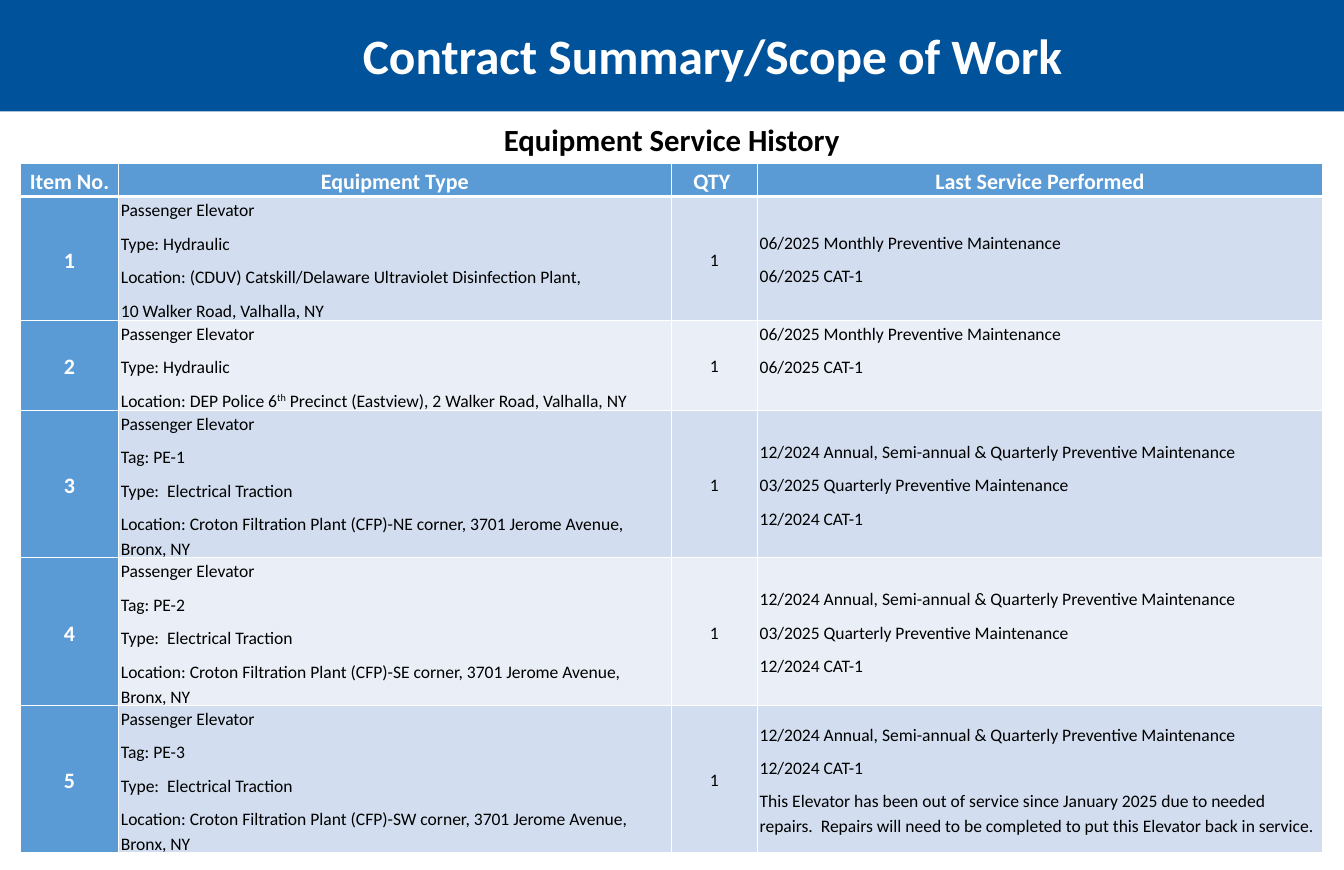
from lxml.etree import SubElement
from pptx import Presentation
from pptx.dml.color import RGBColor
from pptx.enum.shapes import MSO_SHAPE as Preset
from pptx.enum.text import MSO_ANCHOR as Anchor, MSO_AUTO_SIZE as AutoSize, PP_ALIGN as Align
from pptx.oxml.ns import qn
from pptx.util import Inches, Pt

COLUMNS, ROWS = 17, 11
WIDTH, HEIGHT = Inches(17), Inches(11)
FONT = "Calibri"
BANNER_BLUE = RGBColor(0x00, 0x52, 0x9B)
HEADER_BLUE = RGBColor(0x5B, 0x9B, 0xD5)
BAND_DARK = RGBColor(0xD2, 0xDE, 0xEF)
BAND_LIGHT = RGBColor(0xEA, 0xEF, 0xF7)
WHITE = RGBColor(0xFF, 0xFF, 0xFF)
BLACK = RGBColor(0x00, 0x00, 0x00)

TABLE_COLUMNS = (1.24, 6.99, 1.09, 7.15)
TABLE_ROWS = (0.42, 1.55, 1.05, 1.51, 1.56, 1.74)
HEADINGS = ("Item No.", "Equipment Type", "QTY ", "Last Service Performed")
MONTHLY = "06/2025 Monthly Preventive Maintenance"
ANNUAL = "12/2024 Annual, Semi-annual & Quarterly Preventive Maintenance"
QUARTERLY = "03/2025 Quarterly Preventive Maintenance"
JUNE_TEST, DECEMBER_TEST = "06/2025 CAT-1", "12/2024 CAT-1"
OUT_OF_SERVICE = ("This Elevator has been out of service since January 2025 due to needed repairs.  "
                  "Repairs will need to be completed to put this Elevator back in service.")


def hydraulic(*location):
    """Describe a hydraulic elevator."""
    return ("Passenger Elevator", "Type: Hydraulic", *location)


def traction(tag, corner):
    """Describe an electrical traction elevator at the filtration plant."""
    return ("Passenger Elevator", f"Tag: {tag}", "Type:  Electrical Traction",
            f"Location: Croton Filtration Plant (CFP)-{corner} corner, 3701 Jerome Avenue, Bronx, NY")


ELEVATORS = (
    (hydraulic("Location: (CDUV) Catskill/Delaware Ultraviolet Disinfection Plant,",
               "10 Walker Road, Valhalla, NY"), (MONTHLY, JUNE_TEST), Anchor.MIDDLE),
    (hydraulic("Location: DEP Police 6^th^ Precinct (Eastview), 2 Walker Road, Valhalla, NY"),
     (MONTHLY, JUNE_TEST), Anchor.TOP),
    (traction("PE-1", "NE"), (ANNUAL, QUARTERLY, DECEMBER_TEST), Anchor.MIDDLE),
    (traction("PE-2", "SE"), (ANNUAL, QUARTERLY, DECEMBER_TEST), Anchor.MIDDLE),
    (traction("PE-3", "SW"), (ANNUAL, DECEMBER_TEST, OUT_OF_SERVICE), Anchor.MIDDLE),
)


def across(columns):
    """Turn grid columns into a length."""
    return round(WIDTH * columns / COLUMNS)


def down(rows):
    """Turn grid rows into a length."""
    return round(HEIGHT * rows / ROWS)


def area(left, top, width, height):
    """Turn a place on the grid into lengths."""
    return across(left), down(top), across(width), down(height)


def write_lines(frame, lines, size, color, bold, align, spacing, after):
    """Write one paragraph per line, raising the text between carets."""
    for index, line in enumerate(lines):
        para = frame.add_paragraph() if index else frame.paragraphs[0]
        para.alignment = align
        para.line_spacing = spacing
        para.space_after = Pt(after)
        for part, text in enumerate(line.split("^")):
            span = para.add_run()
            span.text = text
            span.font.name = FONT
            span.font.size = Pt(size)
            span.font.bold = bold
            span.font.color.rgb = color
            if part % 2:
                span._r.get_or_add_rPr().set("baseline", "30000")


def add_banner(page):
    """Add the blue band along the top."""
    banner = page.shapes.add_shape(Preset.RECTANGLE, *area(0, 0, COLUMNS, 1.41))
    banner.shadow.inherit = False
    banner.fill.solid()
    banner.fill.fore_color.rgb = BANNER_BLUE
    banner.line.fill.background()


def add_heading(page, place, text, size, color, spacing=1.0, after=0):
    """Add a bold centred heading."""
    box = page.shapes.add_textbox(*area(*place))
    box.text_frame.word_wrap = True
    box.text_frame.auto_size = AutoSize.SHAPE_TO_FIT_TEXT
    write_lines(box.text_frame, (text,), size, color, True, Align.CENTER, spacing, after)


def add_border(cell, side, points):
    """Draw one white edge of a cell."""
    edge = SubElement(cell._tc.get_or_add_tcPr(), qn(f"a:ln{side}"), w=str(Pt(points)))
    SubElement(SubElement(edge, qn("a:solidFill")), qn("a:srgbClr"), val=str(WHITE))


def fill_cell(cell, lines, fill, strong=False, align=Align.CENTER, anchor=Anchor.MIDDLE, top=1, bottom=1):
    """Style a table cell and write its lines."""
    cell.margin_left = cell.margin_right = across(0.03)
    cell.margin_top = cell.margin_bottom = 0
    cell.vertical_anchor = anchor
    for side, points in (("L", 1), ("R", 1), ("T", top), ("B", bottom)):
        add_border(cell, side, points)
    cell.fill.solid()
    cell.fill.fore_color.rgb = fill
    size, color = (20, WHITE) if strong else (16, BLACK)
    write_lines(cell.text_frame, lines, size, color, strong, align, 1.15, 8)


def add_history(page):
    """Add the table of elevators and their last service."""
    place = area(0.26, 2.07, 16.48, 8.66)
    holder = page.shapes.add_table(len(TABLE_ROWS), len(TABLE_COLUMNS), *place)
    table = holder.table
    table.horz_banding = False
    for column, share in zip(table.columns, TABLE_COLUMNS):
        column.width = across(share)
    for row, share in zip(table.rows, TABLE_ROWS):
        row.height = down(share)
    holder.height = place[3]
    for index, heading in enumerate(HEADINGS):
        fill_cell(table.cell(0, index), (heading,), HEADER_BLUE, strong=True, bottom=3)
    for number, (equipment, service, anchor) in enumerate(ELEVATORS, start=1):
        item, kind, quantity, last = table.rows[number].cells
        band = BAND_DARK if number % 2 else BAND_LIGHT
        top = 3 if number == 1 else 1
        fill_cell(item, (str(number),), HEADER_BLUE, strong=True, top=top)
        fill_cell(kind, equipment, band, align=Align.LEFT, top=top)
        fill_cell(quantity, ("1",), band, top=top)
        fill_cell(last, service, band, align=Align.LEFT, anchor=anchor, top=top)


def main():
    """Build the slide and save it."""
    deck = Presentation()
    deck.slide_width, deck.slide_height = WIDTH, HEIGHT
    page = deck.slides.add_slide(deck.slide_layouts[6])
    add_banner(page)
    add_heading(page, (2.64, 0.27, 12.75, 0.86), "Contract Summary/Scope of Work", 45, WHITE)
    add_heading(page, (4.09, 1.45, 8.81, 0.58), "Equipment Service History", 28, BLACK, 1.07, 8)
    add_history(page)
    deck.save("out.pptx")


if __name__ == "__main__":
    main()
